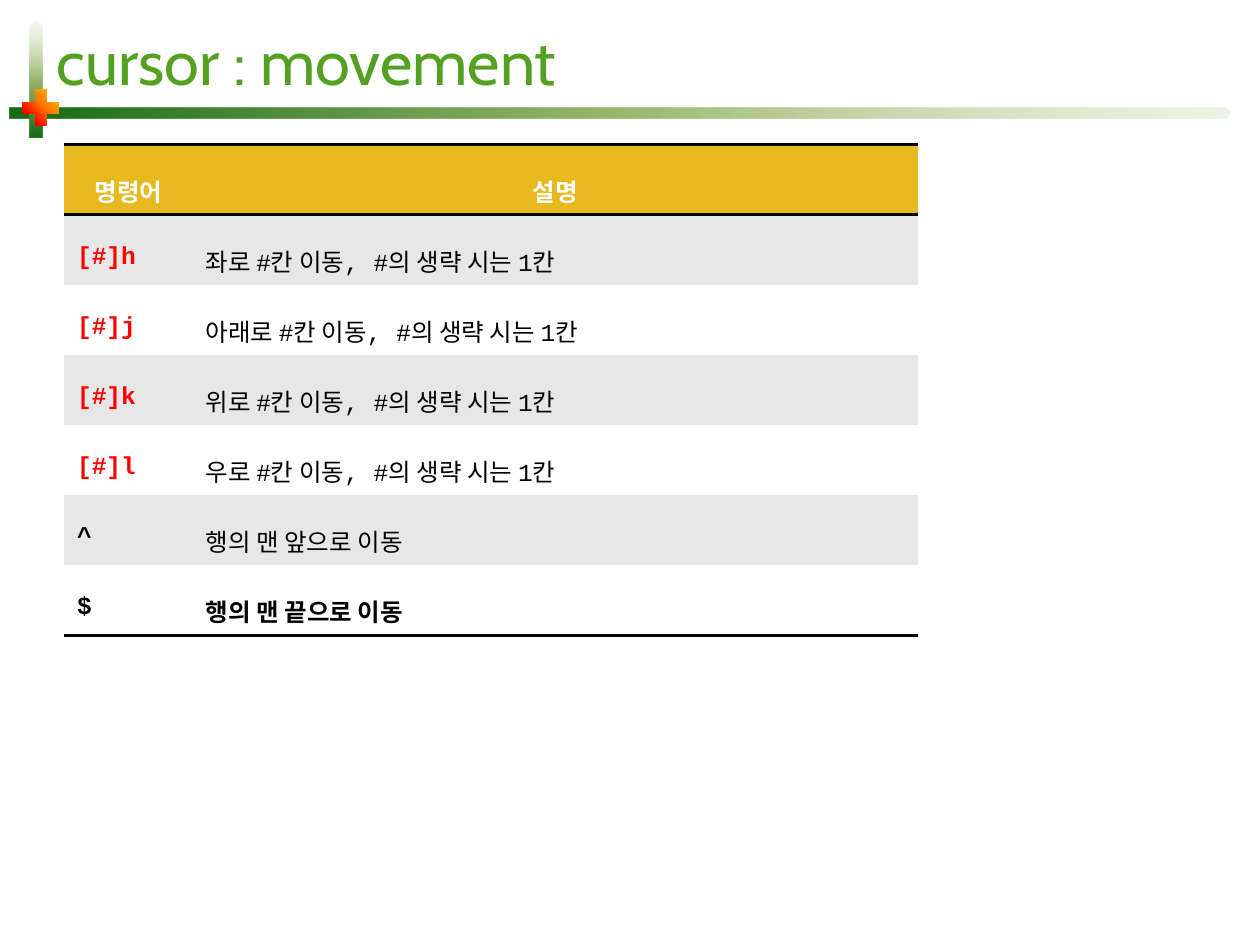
from pptx import Presentation
from pptx import util as u
from pptx.dml.color import RGBColor
from pptx.enum import shapes, text
from pptx.oxml import parse_xml
from pptx.oxml.ns import nsdecls, qn

COLORS = {
    "title": "54A021", "header": "E6B91E", "band": "E7E7E7", "plain": "FFFFFF",
    "key": "FF0000", "body": "000000", "rule": "000000",
}
GREENS = [(50, "9CB86E", 100), (100, "156B13", 100)]
FLAME = [(0, "FFF200", 100), (45, "FF7A00", 100), (70, "FF0300", 100), (100, "4D0808", 100)]


def add_gradient_shape(page, kind, place, stops, angle, turn=0):
    shape = page.shapes.add_shape(kind, *[u.Cm(value) for value in place])
    shape.rotation = turn
    shape.shadow.inherit = False
    shape.line.fill.background()
    marks = "".join(
        f'<a:gs pos="{pos * 1000}"><a:srgbClr val="{color}">'
        f'<a:alpha val="{alpha * 1000}"/></a:srgbClr></a:gs>'
        for pos, color, alpha in stops)
    gradient = parse_xml(
        f'<a:gradFill {nsdecls("a")} rotWithShape="1"><a:gsLst>{marks}</a:gsLst>'
        f'<a:lin ang="{angle * 60000}" scaled="0"/></a:gradFill>')
    shape.element.spPr.find(qn("a:ln")).addprevious(gradient)
    return shape


def add_rules(cell, sides):
    for index, side in enumerate(sides):
        rule = parse_xml(
            f'<a:ln{side} {nsdecls("a")} w="{u.Pt(2)}"><a:solidFill>'
            f'<a:srgbClr val="{COLORS["rule"]}"/></a:solidFill></a:ln{side}>')
        cell._tc.get_or_add_tcPr().insert(index, rule)


deck = Presentation()
deck.slide_width, deck.slide_height = u.Cm(25.4), u.Cm(19.05)
page = deck.slides.add_slide(deck.slide_layouts[5])

# Title
title = page.shapes.title
title.left, title.top, title.width, title.height = u.Cm(0.89), u.Cm(0.25), u.Cm(23.9), u.Cm(1.93)
title.text_frame.text = "cursor : movement"
title.text_frame.vertical_anchor = text.MSO_ANCHOR.MIDDLE
para = title.text_frame.paragraphs[0]
para.alignment = text.PP_ALIGN.LEFT
span = para.runs[0]
span.font.name, span.font.size = "Cabin", u.Pt(36)
span.font.color.rgb = RGBColor.from_string(COLORS["title"])

# Crossed bars and plus sign behind the title
kinds = shapes.MSO_SHAPE
ornaments = [
    (kinds.PENTAGON, (0.2, 2.18, 24.61, 0.2), [(0, "DDEBCF", 50)] + GREENS, 180, 0),
    (kinds.PENTAGON, (-0.46, 1.47, 2.36, 0.25), [(0, "DDEBCF", 30)] + GREENS, 180, 270),
    (kinds.MATH_PLUS, (0.33, 1.68, 0.99, 0.99), FLAME, 135, 0),
]
for ornament in ornaments:
    shape = add_gradient_shape(page, *ornament)
    title.element.addprevious(shape.element)

# Command table
rows = [
    ("명령어", "설명"),
    ("[#]h", "좌로 #칸 이동, #의 생략 시는 1칸"),
    ("[#]j", "아래로 #칸 이동, #의 생략 시는 1칸"),
    ("[#]k", "위로 #칸 이동, #의 생략 시는 1칸"),
    ("[#]l", "우로 #칸 이동, #의 생략 시는 1칸"),
    ("^", "행의 맨 앞으로 이동"),
    ("$", "행의 맨 끝으로 이동"),
]
last = len(rows) - 1
frame = page.shapes.add_table(len(rows), 2, u.Cm(1.3), u.Cm(2.92), u.Cm(17.2), u.Cm(1.41 * len(rows)))
table = frame.table
# Plain style without grid lines
table._tbl.tblPr.find(qn("a:tableStyleId")).text = "{2D5ABB26-0587-4C30-8999-92F81FD0307C}"
table.columns[0].width, table.columns[1].width = u.Cm(2.59), u.Cm(14.61)

for r, words in enumerate(rows):
    table.rows[r].height = u.Cm(1.41)
    for c, word in enumerate(words):
        cell = table.cell(r, c)
        cell.vertical_anchor = text.MSO_ANCHOR.MIDDLE
        fill = "header" if r == 0 else "band" if r % 2 else "plain"
        cell.fill.solid()
        cell.fill.fore_color.rgb = RGBColor.from_string(COLORS[fill])
        cell.text_frame.text = word
        para = cell.text_frame.paragraphs[0]
        para.line_spacing = 1.6
        para.alignment = text.PP_ALIGN.CENTER if r == 0 else text.PP_ALIGN.LEFT
        font = para.runs[0].font
        font.name, font.size = "Courier New", u.Pt(14)
        font.bold = c == 0 or r in (0, last)
        ink = "plain" if r == 0 else "key" if word.startswith("[#]") else "body"
        font.color.rgb = RGBColor.from_string(COLORS[ink])
        if r in (0, last):
            add_rules(cell, "TB" if r == 0 else "B")

deck.save("out.pptx")
